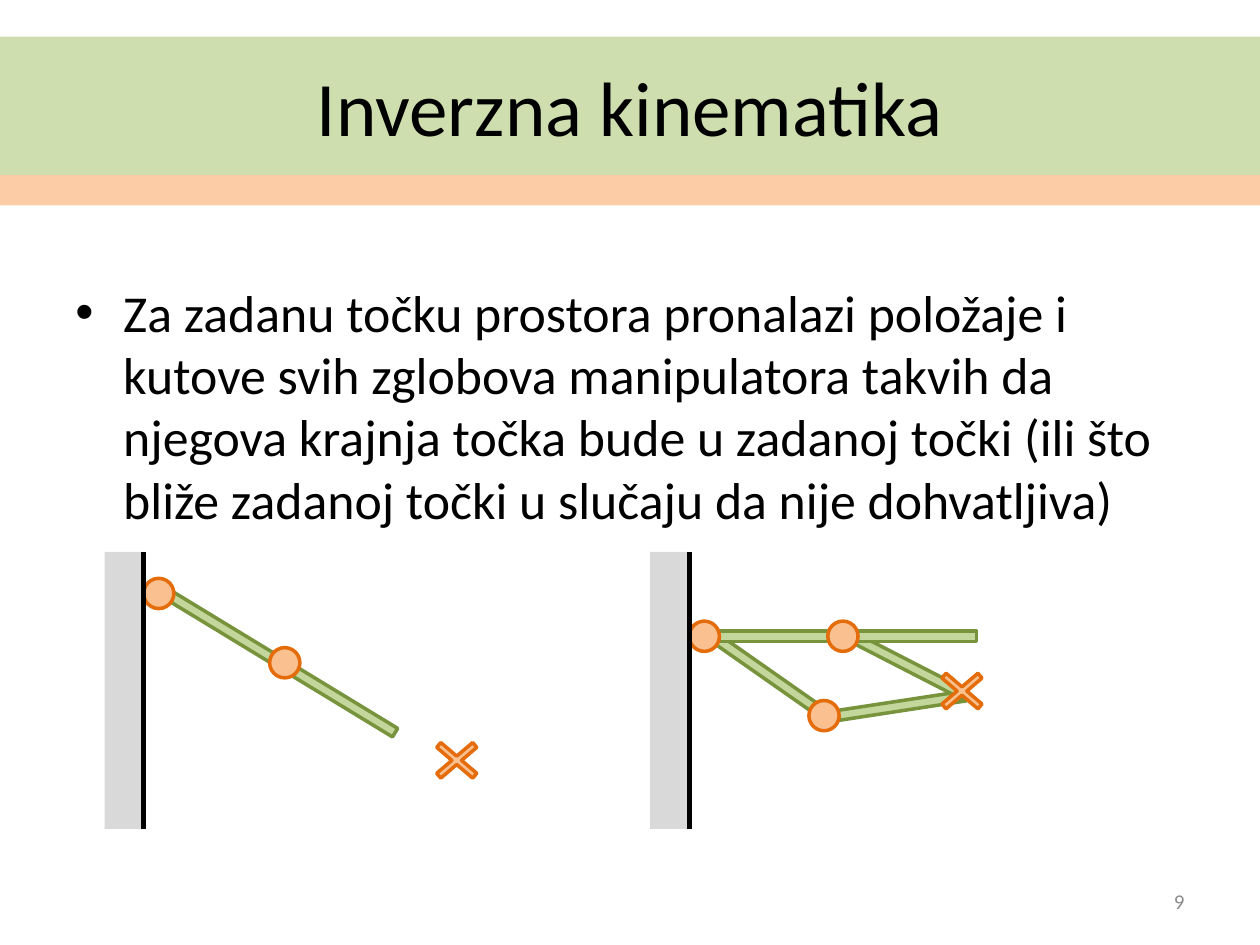
from lxml import etree
from pptx import Presentation
from pptx.dml.color import RGBColor
from pptx.enum.shapes import MSO_CONNECTOR, MSO_SHAPE
from pptx.enum.text import MSO_ANCHOR, PP_ALIGN
from pptx.oxml.ns import qn
from pptx.util import Pt

RECT, OVAL, CROSS = MSO_SHAPE.RECTANGLE, MSO_SHAPE.OVAL, MSO_SHAPE.MATH_MULTIPLY
LINE = MSO_CONNECTOR.STRAIGHT
TOP, MIDDLE = MSO_ANCHOR.TOP, MSO_ANCHOR.MIDDLE
LEFT, CENTER, RIGHT = PP_ALIGN.LEFT, PP_ALIGN.CENTER, PP_ALIGN.RIGHT

GREEN = RGBColor(0xC3, 0xD6, 0x9B)
OLIVE = RGBColor(0x77, 0x93, 0x3C)
PEACH = RGBColor(0xFA, 0xC0, 0x90)
ORANGE = RGBColor(0xE4, 0x6C, 0x0A)
PALE = RGBColor(0xD9, 0xD9, 0xD9)
GRAY = RGBColor(0x8C, 0x8C, 0x8C)
BLACK = RGBColor(0, 0, 0)

SCALE = 9144  # EMU per px, 100 px to the inch


def px(*nums):
    return [n * SCALE for n in nums]


def add_shape(slide, kind, box, fill, edge=None, alpha=None):
    shape = slide.shapes.add_shape(kind, *px(*box))
    shape.shadow.inherit = False
    shape.fill.solid()
    shape.fill.fore_color.rgb = fill
    if alpha:
        color = shape.fill._xPr.find(qn("a:solidFill"))[0]
        etree.SubElement(color, qn("a:alpha")).set("val", str(alpha * 1000))
    if edge is None:
        shape.line.fill.background()
    else:
        shape.line.color.rgb = edge
        shape.line.width = Pt(2)
    return shape


def set_text(shape, text, size, color, align, anchor, bullet=False):
    frame = shape.text_frame
    frame.word_wrap = True
    frame.vertical_anchor = anchor
    para = frame.paragraphs[0]
    para.text = text
    para.alignment = align
    if bullet:
        props = para._p.get_or_add_pPr()
        hang, = px(38)
        props.set("marL", str(hang))
        props.set("indent", str(-hang))
        etree.SubElement(props, qn("a:buFont")).set("typeface", "Arial")
        etree.SubElement(props, qn("a:buChar")).set("char", "•")
    for name, value in {"name": "Calibri", "size": Pt(size)}.items():
        setattr(para.font, name, value)
    para.font.color.rgb = color


def add_header(slide, left, top, width):
    # Title band with an accent stripe under it
    band = add_shape(slide, RECT, (left, top, width, 110), GREEN, alpha=80)
    set_text(band, "Inverzna kinematika", 44, BLACK, CENTER, MIDDLE)
    add_shape(slide, RECT, (left, top + 110, width, 24), PEACH, alpha=80)


def add_text(slide, box, *style, **extra):
    set_text(slide.shapes.add_textbox(*px(*box)), *style, **extra)


def add_arm(slide, left, top, bars, joints, target):
    # Links: x, y, angle
    for x, y, angle in bars:
        bar = add_shape(slide, RECT, (left + x, top + y, 102, 8), GREEN, OLIVE)
        bar.rotation = angle
    # Joints
    for x, y in joints:
        add_shape(slide, OVAL, (left + x, top + y, 24, 24), PEACH, ORANGE)
    # Target point
    x, y = target
    cross = add_shape(slide, CROSS, (left + x, top + y, 55, 47), PEACH, ORANGE)
    cross.adjustments[0] = 0.107
    # Wall
    wide, high = 31, 220
    add_shape(slide, RECT, (left, top, wide, high), PALE)
    edge = slide.shapes.add_connector(
        LINE, *px(left + wide, top, left + wide, top + high))
    edge.line.color.rgb = BLACK
    edge.line.width = Pt(3)
    etree.SubElement(edge._element.spPr, qn("a:effectLst"))


def main():
    deck = Presentation()
    deck.slide_width, deck.slide_height = px(1000, 750)
    slide = deck.slides.add_slide(deck.slide_layouts[6])

    add_header(slide, 0, 29, 1000)
    add_text(slide, (50, 218, 900, 220),
             "Za zadanu točku prostora pronalazi položaje i kutove svih "
             "zglobova manipulatora takvih da njegova krajnja točka bude u "
             "zadanoj točki (ili što bliže zadanoj točki u slučaju da nije "
             "dohvatljiva)", 29.6, BLACK, LEFT, TOP, bullet=True)

    # Arm stretched towards a point out of reach
    add_arm(slide, 83, 438,
            bars=[(136, 113, 31.3), (39, 54, 31.3)],
            joints=[(31, 21), (131, 76)],
            target=(252, 142))
    # Straight arm, and its bent pose at the target
    add_arm(slide, 516, 438,
            bars=[(149, 118, 351.3), (40, 92, 35), (153, 86, 27.2),
                  (157, 63, 0), (47, 63, 0)],
            joints=[(31, 55), (141, 55), (126, 118)],
            target=(220, 87))

    # Page number
    add_text(slide, (717, 695, 233, 40), "9", 12, GRAY, RIGHT, MIDDLE)
    deck.save("out.pptx")


if __name__ == "__main__":
    main()
